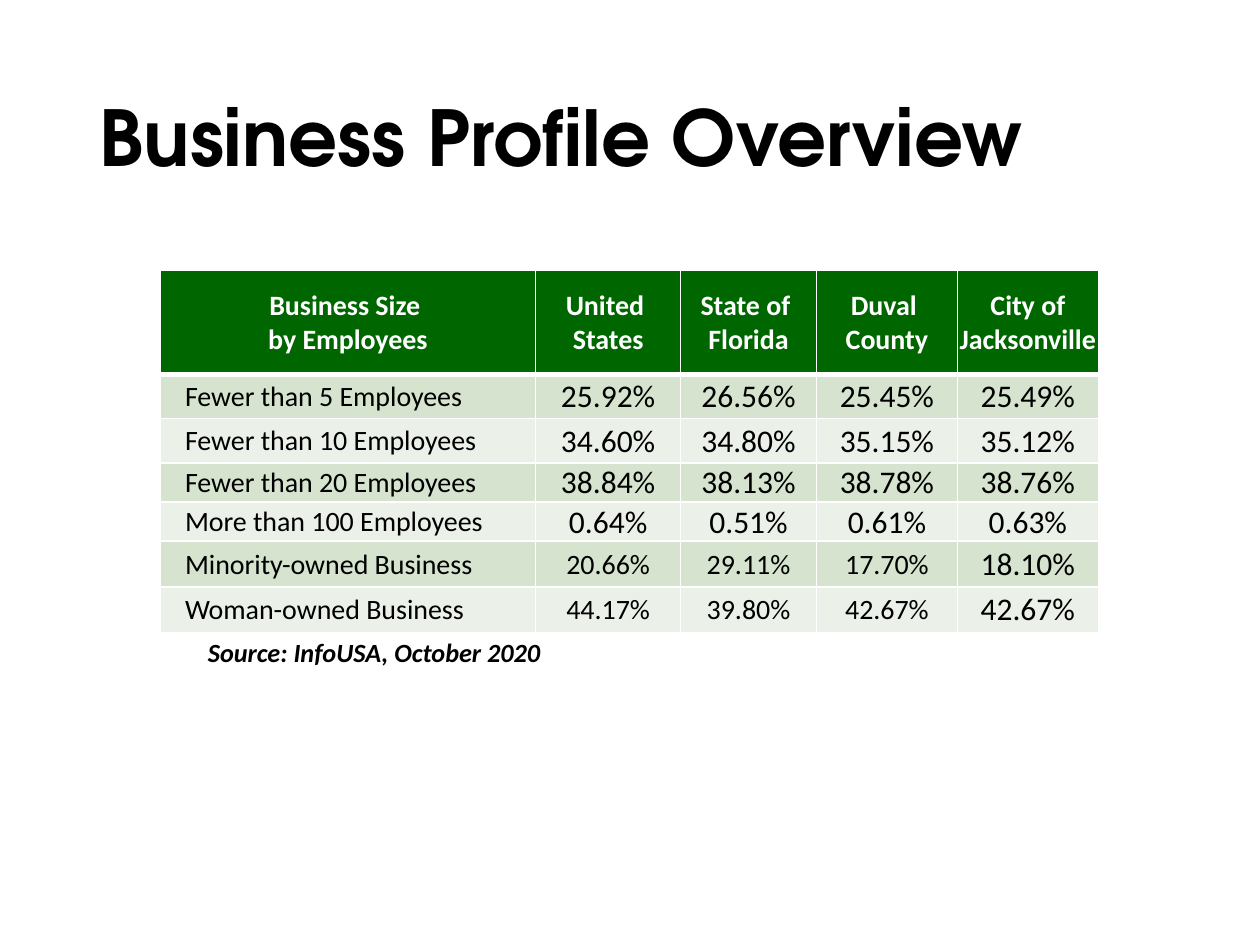
from lxml import etree
from pptx import Presentation
from pptx.dml.color import RGBColor
from pptx.enum.text import MSO_ANCHOR, PP_ALIGN
from pptx.oxml.ns import qn
from pptx.util import Cm, Pt

MIDDLE = MSO_ANCHOR.MIDDLE
LEFT, CENTER = PP_ALIGN.LEFT, PP_ALIGN.CENTER
TITLE_FONT, BODY_FONT = "TeX Gyre Adventor", "Calibri"
COLORS = {"text": "000000", "white": "FFFFFF", "header": "006600",
          "band_dark": "D5E3CF", "band_light": "EBF1E9"}
COL_WIDTHS = (7.57, 2.92, 2.74, 2.84, 2.84)
ROW_HEIGHTS = (2.11, 0.89, 0.89, 0.79, 0.79, 0.92, 0.92)
HEADERS = (("Business Size ", "by Employees"), ("United ", "States"),
           ("State of ", "Florida"), ("Duval ", "County"),
           ("City of Jacksonville",))
ROWS = (
    ("Fewer than 5 Employees", "25.92%", "26.56%", "25.45%", "25.49%"),
    ("Fewer than 10 Employees", "34.60%", "34.80%", "35.15%", "35.12%"),
    ("Fewer than 20 Employees", "38.84%", "38.13%", "38.78%", "38.76%"),
    ("More than 100 Employees", "0.64%", "0.51%", "0.61%", "0.63%"),
    ("Minority-owned Business", "20.66%", "29.11%", "17.70%", "18.10%"),
    ("Woman-owned Business", "44.17%", "39.80%", "42.67%", "42.67%"),
)


def add_run(p, text, size, color="text", font=BODY_FONT, bold=False, italic=False):
    """Append one formatted run to a paragraph."""
    r = p.add_run()
    r.text = text
    r.font.name, r.font.size = font, Pt(size)
    r.font.bold, r.font.italic = bold, italic
    r.font.color.rgb = RGBColor.from_string(COLORS[color])


def set_borders(cell, top, bottom):
    """Draw white cell borders with the given top and bottom widths."""
    tcPr = cell._tc.get_or_add_tcPr()
    sides = (("a:lnL", 1), ("a:lnR", 1), ("a:lnT", top), ("a:lnB", bottom))
    for i, (tag, width) in enumerate(sides):
        ln = etree.Element(qn(tag), w=str(Pt(width)))
        fill = etree.SubElement(ln, qn("a:solidFill"))
        etree.SubElement(fill, qn("a:srgbClr"), val=COLORS["white"])
        tcPr.insert(i, ln)


def fill_cell(cell, lines, size, fill, color="text", bold=False, align=CENTER):
    """Fill one table cell with paragraphs on a solid colour."""
    cell.fill.solid()
    cell.fill.fore_color.rgb = RGBColor.from_string(COLORS[fill])
    cell.vertical_anchor = MIDDLE
    cell.margin_left = cell.margin_right = cell.margin_top = Cm(0.02)
    cell.margin_bottom = 0
    tf = cell.text_frame
    for i, line in enumerate(lines):
        p = tf.add_paragraph() if i else tf.paragraphs[0]
        p.alignment = align
        if align == LEFT:
            p._p.get_or_add_pPr().set("marL", str(Cm(0.48)))
        add_run(p, line, size, color, bold=bold)


def add_title(slide, left, top, width, height):
    """Add the slide title."""
    tf = slide.shapes.add_textbox(left, top, width, height).text_frame
    tf.word_wrap = True
    tf.vertical_anchor = MIDDLE
    p = tf.paragraphs[0]
    p.line_spacing = 0.9
    add_run(p, "Business Profile Overview", 44, font=TITLE_FONT, bold=True)


def add_profile_table(slide, left, top):
    """Add the business size table."""
    table = slide.shapes.add_table(
        len(ROW_HEIGHTS), len(COL_WIDTHS), left, top,
        Cm(sum(COL_WIDTHS)), Cm(sum(ROW_HEIGHTS))).table
    table.first_row = table.horz_banding = False
    for col, width in zip(table.columns, COL_WIDTHS):
        col.width = Cm(width)
    for row, height in zip(table.rows, ROW_HEIGHTS):
        row.height = Cm(height)
    for c, lines in enumerate(HEADERS):
        cell = table.cell(0, c)
        fill_cell(cell, lines, 16, "header", "white", bold=True)
        set_borders(cell, 1, 3)
    for r, values in enumerate(ROWS, 1):
        band = "band_dark" if r % 2 else "band_light"
        for c, value in enumerate(values):
            cell = table.cell(r, c)
            small = c == 0 or (r >= 5 and c < 4)
            fill_cell(cell, [value], 16 if small else 18, band,
                      align=CENTER if c else LEFT)
            set_borders(cell, 3 if r == 1 else 1, 1)


def add_source(slide, left, top, width, height):
    """Add the source line below the table."""
    tf = slide.shapes.add_textbox(left, top, width, height).text_frame
    tf.word_wrap = False
    add_run(tf.paragraphs[0], "Source: InfoUSA, October 2020", 15,
            bold=True, italic=True)


def main():
    """Build and save the slide."""
    prs = Presentation()
    prs.slide_width, prs.slide_height = Cm(25.4), Cm(19.05)
    slide = prs.slides.add_slide(prs.slide_layouts[6])
    add_title(slide, Cm(1.75), Cm(1.02), Cm(21.9), Cm(3.68))
    add_source(slide, Cm(3.94), Cm(12.7), Cm(7.29), Cm(0.89))
    add_profile_table(slide, Cm(3.23), Cm(5.44))
    prs.save("out.pptx")


if __name__ == "__main__":
    main()
